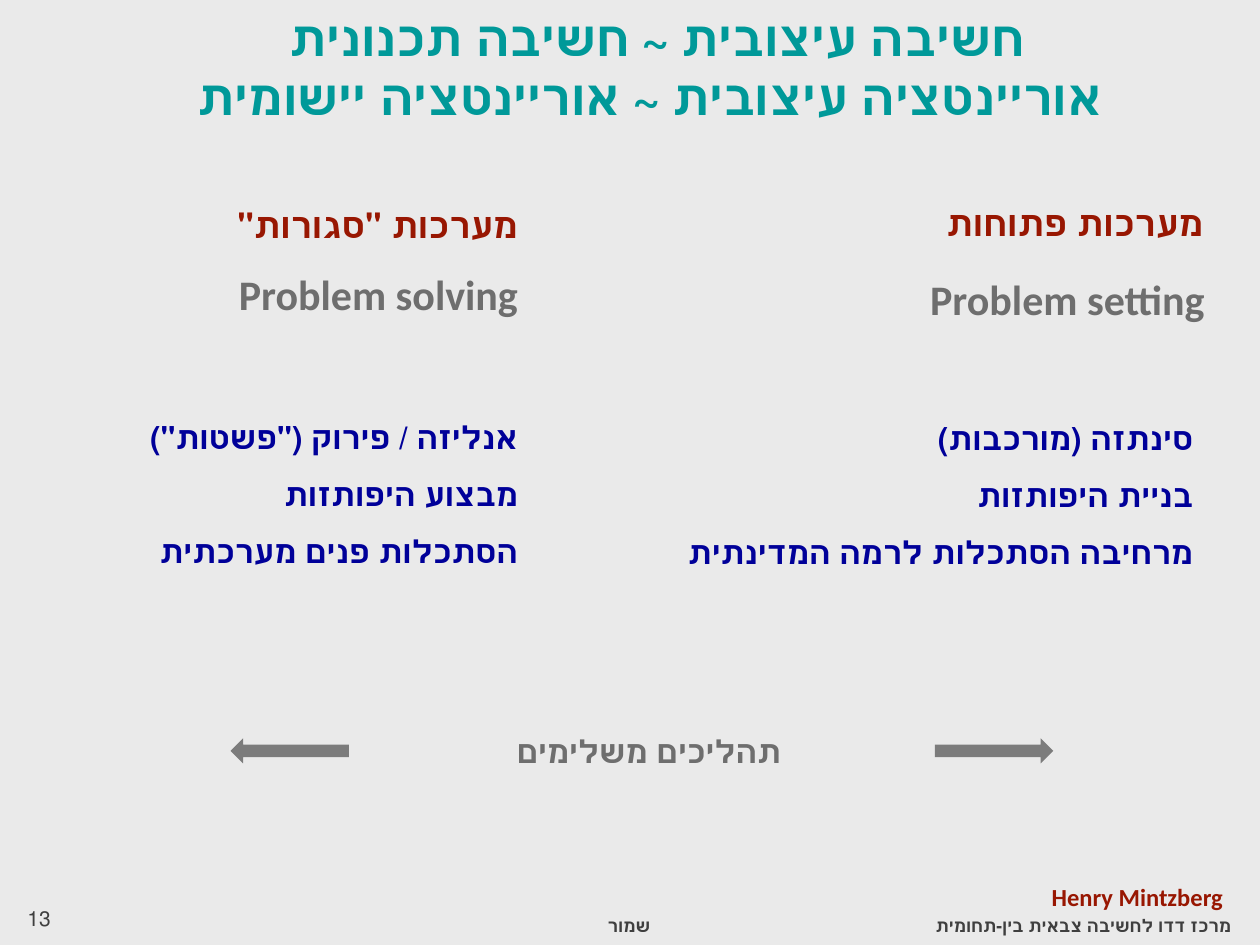
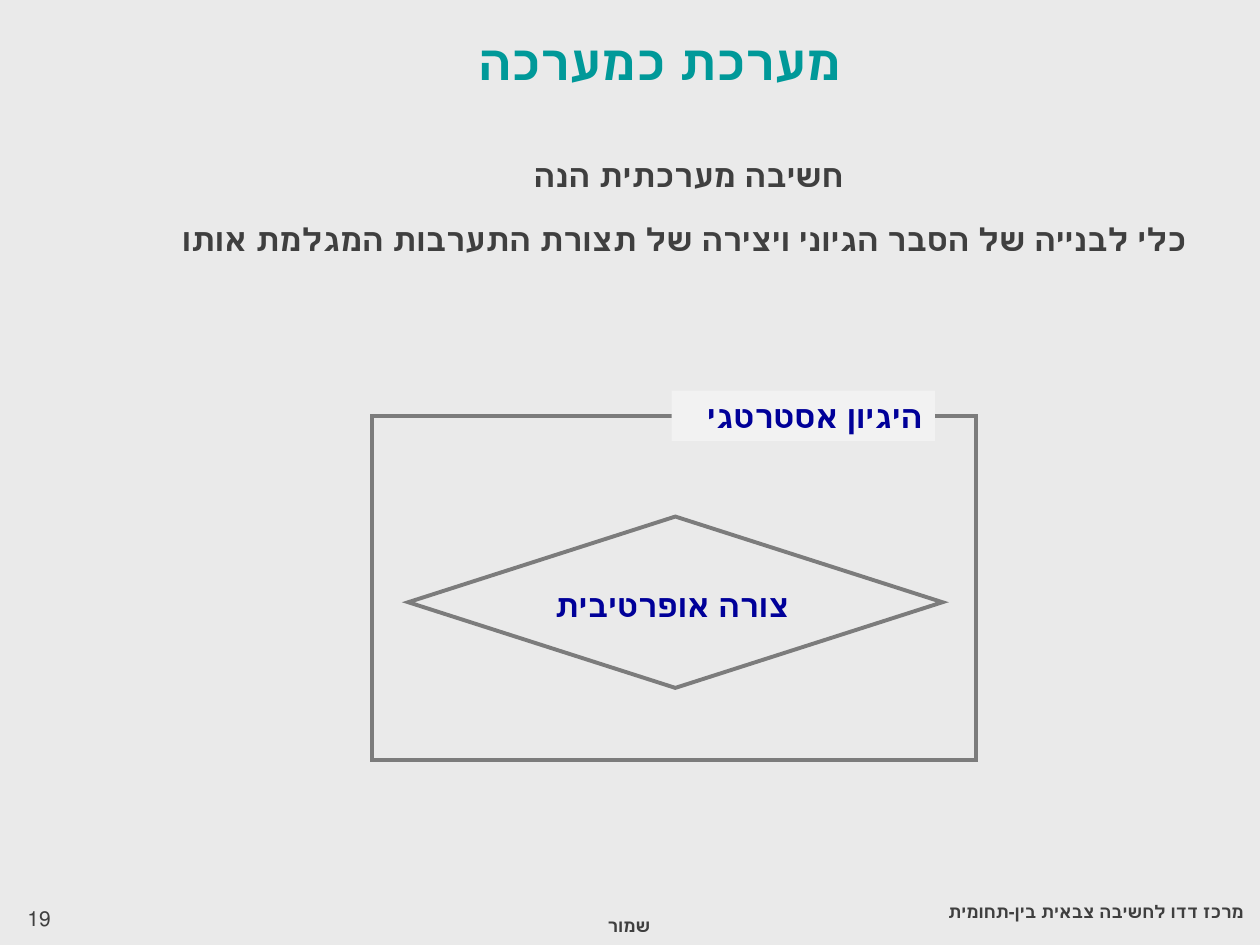
from dataclasses import dataclass
from typing import Any, NamedTuple, Optional

from lxml import etree
from pptx import Presentation
from pptx import util as u
from pptx.dml.color import RGBColor
from pptx.enum import shapes, text
from pptx.oxml import ns

PX = 9144
SLIDE_WIDTH, SLIDE_HEIGHT = 1000, 750
FONT = "Calibri"
TITLE_ONLY = 5

BACKGROUND = RGBColor(0xEA, 0xEA, 0xEA)
TEAL = RGBColor(0x00, 0x99, 0x99)
NAVY = RGBColor(0x00, 0x00, 0x99)
DARK_RED = RGBColor(0x98, 0x17, 0x02)
DARK_GRAY = RGBColor(0x3F, 0x3F, 0x3F)
TEXT_GRAY = RGBColor(0x6E, 0x6E, 0x6E)
SHAPE_GRAY = RGBColor(0x7C, 0x7C, 0x7C)
LABEL_FILL = RGBColor(0xF2, 0xF2, 0xF2)

LEFT, CENTER, RIGHT = text.PP_ALIGN.LEFT, text.PP_ALIGN.CENTER, text.PP_ALIGN.RIGHT


class Box(NamedTuple):
    left: int
    top: int
    width: int
    height: int

    def emu(self) -> list[u.Emu]:
        return [u.Emu(length * PX) for length in self]


@dataclass(frozen=True)
class Column:
    heading: str
    heading_box: Box
    approach: str
    approach_box: Box
    traits: tuple[str, ...]
    traits_box: Box


COLUMNS = (
    Column("מערכות פתוחות", Box(516, 138, 449, 61),
           "Problem setting", Box(651, 212, 315, 50),
           ("סינתזה (מורכבות)", "בניית היפותזות ", "מרחיבה הסתכלות לרמה המדינתית"),
           Box(516, 313, 441, 162)),
    Column('מערכות "סגורות"', Box(74, 140, 347, 55),
           "Problem solving", Box(106, 208, 315, 50),
           ('אנליזה / פירוק ("פשטות")', "מבצוע היפותזות", "הסתכלות פנים מערכתית"),
           Box(19, 312, 402, 162)),
)


def write(shape: Any, *lines: str, size: int, color: RGBColor, align: Any = RIGHT,
          bold: bool = True, spacing: float = 1.0, gap: int = 0) -> None:
    frame = shape.text_frame
    frame.word_wrap = True
    frame.auto_size = text.MSO_AUTO_SIZE.NONE
    frame.vertical_anchor = text.MSO_ANCHOR.TOP
    for index, line in enumerate(lines):
        paragraph = frame.add_paragraph() if index else frame.paragraphs[0]
        paragraph.text = line
        paragraph.alignment = align
        paragraph.line_spacing = spacing
        paragraph.space_before = u.Pt(gap if index else 0)
        paragraph._p.get_or_add_pPr().set("rtl", "1")
        for run in paragraph.runs:
            run.font.size = u.Pt(size)
            run.font.bold = bold
            run.font.color.rgb = color
            run.font.name = FONT


def add_text(parent: Any, box: Box, *lines: str, **style: Any) -> None:
    write(parent.shapes.add_textbox(*box.emu()), *lines, **style)


def add_preset(parent: Any, preset: Any, box: Box, fill: Optional[RGBColor] = None,
               line: Optional[RGBColor] = None) -> Any:
    shape = parent.shapes.add_shape(preset, *box.emu())
    shape.shadow.inherit = False
    if fill is None:
        shape.fill.background()
    else:
        shape.fill.solid()
        shape.fill.fore_color.rgb = fill
    if line is None:
        shape.line.fill.background()
    else:
        shape.line.color.rgb = line
        shape.line.width = u.Pt(2.25)
        outline = shape._element.spPr.find(ns.qn("a:ln"))
        etree.SubElement(outline, ns.qn("a:miter")).set("lim", "800000")
    return shape


def add_slide(prs: Any, title: str, title_box: Box, number: str, center_box: Box) -> Any:
    slide = prs.slides.add_slide(prs.slide_layouts[TITLE_ONLY])
    heading = slide.shapes.title
    heading.left, heading.top, heading.width, heading.height = title_box.emu()
    write(heading, title, size=28, color=TEAL, align=CENTER)
    add_text(slide, Box(12, 714, 233, 40), number, size=12, color=DARK_GRAY,
             align=LEFT, bold=False)
    add_text(slide, Box(389, 721, 137, 40), "שמור", size=10, color=DARK_GRAY)
    add_text(slide, center_box, "מרכז דדו לחשיבה צבאית בין-תחומית",
             size=10, color=DARK_GRAY)
    return slide


def build_thinking_slide(prs: Any) -> None:
    slide = add_slide(
        prs, "חשיבה עיצובית ~ חשיבה תכנונית \vאוריינטציה עיצובית ~ אוריינטציה יישומית",
        Box(66, 1, 900, 117), "13", Box(670, 721, 317, 40))
    for column in COLUMNS:
        add_text(slide, column.heading_box, column.heading, size=20, color=DARK_RED,
                 spacing=1.5)
        add_text(slide, column.approach_box, column.approach, size=24, color=TEXT_GRAY)
        add_text(slide, column.traits_box, *column.traits, size=18, color=NAVY,
                 spacing=1.5)
    add_text(slide, Box(651, 695, 335, 34), " Henry Mintzberg", size=14, color=DARK_RED)

    processes = slide.shapes.add_group_shape()
    add_text(processes, Box(293, 576, 437, 40), "תהליכים משלימים ", size=18,
             color=TEXT_GRAY, align=CENTER)
    for arrow, left in ((shapes.MSO_SHAPE.RIGHT_ARROW, 742),
                        (shapes.MSO_SHAPE.LEFT_ARROW, 183)):
        add_preset(processes, arrow, Box(left, 586, 94, 20), fill=SHAPE_GRAY)


def build_system_slide(prs: Any) -> None:
    slide = add_slide(prs, "מערכת כמערכה", Box(86, 20, 875, 172), "19",
                      Box(680, 710, 317, 40))
    add_text(slide, Box(67, 104, 952, 109), "חשיבה מערכתית הנה ",
             "כלי לבנייה של הסבר הגיוני ויצירה של תצורת התערבות המגלמת אותו",
             size=18, color=DARK_GRAY, align=CENTER, spacing=1.5, gap=4)
    add_preset(slide, shapes.MSO_SHAPE.RECTANGLE, Box(295, 330, 480, 273), line=SHAPE_GRAY)
    strategic_logic = add_preset(slide, shapes.MSO_SHAPE.RECTANGLE,
                                 Box(533, 310, 209, 40), fill=LABEL_FILL)
    write(strategic_logic, "היגיון אסטרטגי", size=18, color=NAVY)
    add_preset(slide, shapes.MSO_SHAPE.DIAMOND, Box(324, 410, 424, 136), line=SHAPE_GRAY)
    add_text(slide, Box(385, 460, 297, 40), "צורה אופרטיבית", size=18, color=NAVY,
             align=CENTER)


def main() -> None:
    prs = Presentation()
    prs.slide_width, prs.slide_height = u.Emu(SLIDE_WIDTH * PX), u.Emu(SLIDE_HEIGHT * PX)
    background = prs.slide_master.background.fill
    background.solid()
    background.fore_color.rgb = BACKGROUND
    build_thinking_slide(prs)
    build_system_slide(prs)
    prs.save("out.pptx")


if __name__ == "__main__":
    main()
